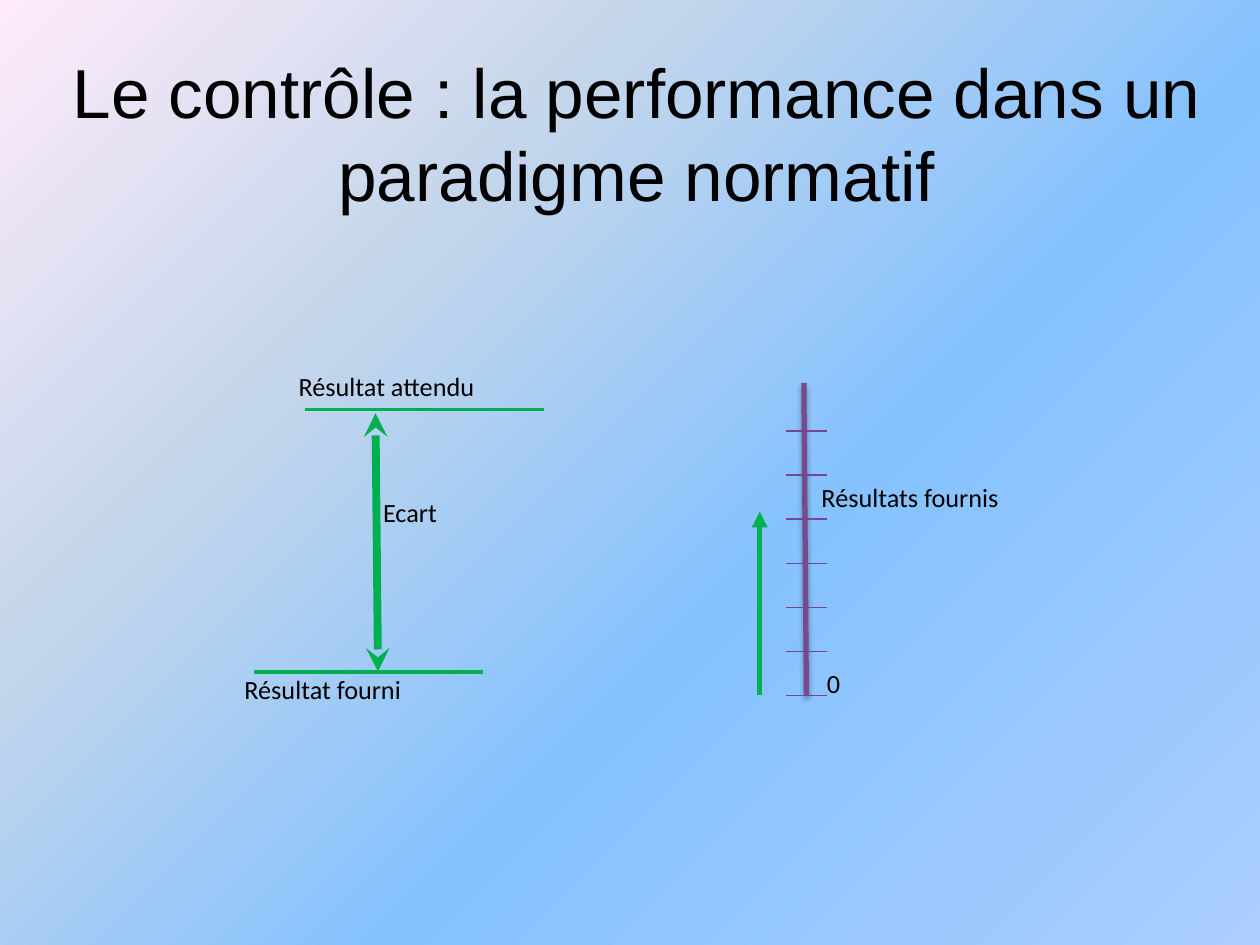
"""Build the slide on control and performance in a normative paradigm."""
import pptx
import pptx.dml.color
import pptx.enum.shapes
import pptx.enum.text
import pptx.oxml
import pptx.oxml.ns
import pptx.util

TITLE = "Le contrôle : la performance dans un paradigme normatif"
BACKGROUND = [(0, "FFEBFA"), (30, "C4D6EB"), (60, "85C2FF"), (100, "ABCDFF")]
GREEN, PURPLE, TICK = "00B050", "79498D", "77468C"
LABELS = [
    ("Résultat attendu", (2.3, 2.88, 2.38, 0.43), "LEFT"),
    ("Résultat fourni", (1.87, 5.29, 2.37, 0.43), "LEFT"),
    ("Ecart", (2.97, 3.88, 1.18, 0.53), "LEFT"),
    ("0", (6.45, 5.24, 0.33, 0.43), "CENTER"),
    ("Résultats fournis", (6.45, 3.76, 2.1, 0.45), "LEFT"),
]
GAP_LINES = [
    ((2.98, 3.28, 3, 5.33), GREEN, 4.5, {"headEnd": "stealth", "tailEnd": "stealth"}),
    ((2.42, 3.25, 4.32, 3.25), GREEN, 2.25, {}),
    ((2.02, 5.33, 3.83, 5.33), GREEN, 2.25, {}),
]
AXIS = (6.38, 3.04, 6.4, 5.52)
RESULT_ARROW = (6.03, 5.52, 6.03, 4.06)
TICKS, TICK_STEP, TICK_LEFT, TICK_RIGHT = 7, 0.35, 6.24, 6.56
NS = pptx.oxml.ns.nsdecls("a")
SHADOW = (
    '<a:outerShdw blurRad="39370" dist="22860" dir="5400000" rotWithShape="0">'
    '<a:srgbClr val="000000"><a:alpha val="35000"/></a:srgbClr></a:outerShdw>'
)


def rgb(value):
    """Turn a hex string into a colour."""
    return pptx.dml.color.RGBColor.from_string(value)


def place(s, box):
    """Position a shape from lengths in inches."""
    s.left, s.top, s.width, s.height = map(pptx.util.Inches, box)


def write(tf, text, size=15, font="Calibri", color="000000", align="LEFT",
          anchor="TOP", spacing=None, after=0):
    """Write one formatted paragraph into a text frame."""
    tf.word_wrap = True
    tf.vertical_anchor = getattr(pptx.enum.text.MSO_ANCHOR, anchor)
    p = tf.paragraphs[0]
    p.alignment = getattr(pptx.enum.text.PP_ALIGN, align)
    p.space_after = pptx.util.Pt(after)
    if spacing:
        p.line_spacing = spacing
    r = p.add_run()
    r.text = text
    r.font.size, r.font.name = pptx.util.Pt(size), font
    r.font.color.rgb = rgb(color)


def add_label(slide, text, box, align):
    """Add a text box with narrow margins."""
    tf = slide.shapes.add_textbox(*map(pptx.util.Inches, box)).text_frame
    tf.margin_left = tf.margin_right = pptx.util.Inches(0.07)
    tf.margin_top = tf.margin_bottom = pptx.util.Inches(0.04)
    write(tf, text, align=align, spacing=1.07, after=6)


def add_line(slide, ends, color, width, arrows=None, effect=""):
    """Add a straight connector with optional arrowheads and effect."""
    kind = pptx.enum.shapes.MSO_CONNECTOR.STRAIGHT
    s = slide.shapes.add_connector(kind, *map(pptx.util.Inches, ends))
    s.line.color.rgb = rgb(color)
    s.line.width = pptx.util.Pt(width)
    ln = s.line._get_or_add_ln()
    for tag, head in (arrows or {}).items():
        ln.append(pptx.oxml.parse_xml(f'<a:{tag} {NS} type="{head}"/>'))
    s._element.spPr.append(
        pptx.oxml.parse_xml(f"<a:effectLst {NS}>{effect}</a:effectLst>"))


def paint_background(slide):
    """Fill the background with a diagonal gradient."""
    fill = slide.background.fill
    fill.solid()
    stops = "".join(
        f'<a:gs pos="{pos * 1000}"><a:srgbClr val="{color}"/></a:gs>'
        for pos, color in BACKGROUND)
    solid = slide._element.find(".//" + pptx.oxml.ns.qn("a:solidFill"))
    solid.getparent().replace(solid, pptx.oxml.parse_xml(
        f'<a:gradFill {NS} rotWithShape="1"><a:gsLst>{stops}</a:gsLst>'
        '<a:lin ang="2700000" scaled="0"/></a:gradFill>'))


def main():
    """Assemble and save the slide."""
    prs = pptx.Presentation()
    prs.slide_width, prs.slide_height = pptx.util.Inches(10), pptx.util.Inches(7.5)
    slide = prs.slides.add_slide(prs.slide_layouts[5])
    paint_background(slide)
    title = slide.shapes.title
    place(title, (0.22, 0.32, 9.67, 1.46))
    write(title.text_frame, TITLE, size=39.6, font="Arial", align="CENTER",
          anchor="MIDDLE")
    for ends, color, width, arrows in GAP_LINES:
        add_line(slide, ends, color, width, arrows)
    add_line(slide, AXIS, PURPLE, 3, effect=SHADOW)
    for i in range(TICKS):
        y = AXIS[3] - i * TICK_STEP
        add_line(slide, (TICK_LEFT, y, TICK_RIGHT, y), TICK, 0.75)
    add_line(slide, RESULT_ARROW, GREEN, 3, {"tailEnd": "triangle"})
    for text, box, align in LABELS:
        add_label(slide, text, box, align)
    prs.save("out.pptx")


if __name__ == "__main__":
    main()
